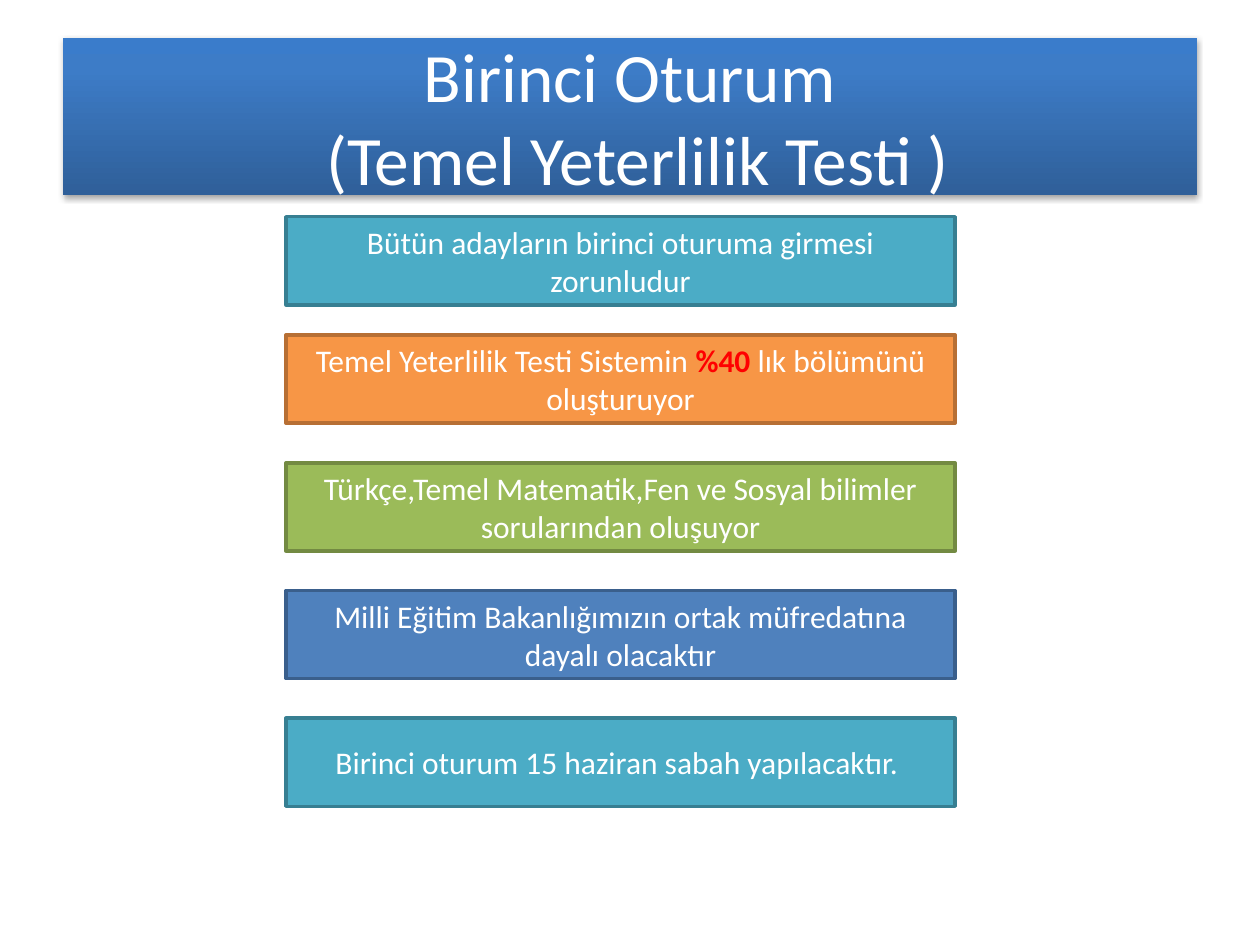
from lxml import etree
from pptx import Presentation
from pptx.dml.color import RGBColor as RGB
from pptx.enum.shapes import MSO_SHAPE as SHAPE
from pptx.enum.text import MSO_ANCHOR as ANCHOR, MSO_AUTO_SIZE as AUTO, PP_ALIGN as ALIGN
from pptx.util import Inches, Pt

NS = "http://schemas.openxmlformats.org/drawingml/2006/main"
FONT = "Calibri"
COLORS = {
    "white": "FFFFFF", "red": "FF0000", "shadow": "000000",
    "title_bottom": "2F5F99", "title_middle": "3D7CC7", "title_top": "3A7CCB",
    "teal": "4BACC6", "teal_edge": "377F92",
    "orange": "F79646", "orange_edge": "B76F34",
    "green": "9BBB59", "green_edge": "738A42",
    "blue": "4F81BD", "blue_edge": "3A5F8C",
}
TITLE = "Birinci Oturum\v (Temel Yeterlilik Testi )"
TITLE_BOX = (0.5, 0.3, 9, 1.25)
# Each fact: fill colour and its runs as (text, highlighted)
INTRO = ("teal", [("Bütün adayların birinci oturuma girmesi zorunludur", False)])
DETAILS = [
    ("orange", [("Temel Yeterlilik Testi Sistemin ", False), ("%40 ", True),
                ("lık bölümünü oluşturuyor", False)]),
    ("green", [("Türkçe,Temel Matematik,Fen ve Sosyal bilimler sorularından oluşuyor", False)]),
    ("blue", [("Milli Eğitim Bakanlığımızın ortak müfredatına dayalı olacaktır", False)]),
    ("teal", [("Birinci oturum 15 haziran sabah yapılacaktır. ", False)]),
]
BAR_LEFT, BAR_WIDTH, BAR_HEIGHT = 2.27, 5.31, 0.7
INTRO_TOP, DETAILS_TOP, LAST_TOP = 1.72, 2.66, 5.7


def rgb(name):
    return RGB.from_string(COLORS[name])


def format_paragraph(p, size):
    p.alignment = ALIGN.CENTER
    p.font.name, p.font.size = FONT, Pt(size)
    p.font.color.rgb = rgb("white")


def add_banner_style(sp):
    """Give the shape a vertical three-stop gradient and a soft shadow below."""
    stops = [(0, "title_bottom"), (80, "title_middle"), (100, "title_top")]
    gs = "".join(f'<a:gs pos="{pos * 1000}"><a:srgbClr val="{COLORS[c]}"/></a:gs>'
                 for pos, c in stops)
    fill = (f'<a:gradFill xmlns:a="{NS}" rotWithShape="1"><a:gsLst>{gs}</a:gsLst>'
            '<a:lin ang="16200000" scaled="0"/></a:gradFill>')
    shadow = (f'<a:effectLst xmlns:a="{NS}"><a:outerShdw blurRad="{Pt(3.1)}" '
              f'dist="{Pt(1.8)}" dir="5400000" rotWithShape="0">'
              f'<a:srgbClr val="{COLORS["shadow"]}"><a:alpha val="35000"/></a:srgbClr>'
              '</a:outerShdw></a:effectLst>')
    for xml in (fill, shadow):
        sp._element.spPr.append(etree.fromstring(xml))


def add_title(s, box):
    sp = s.shapes.title
    sp.left, sp.top, sp.width, sp.height = map(Inches, box)
    add_banner_style(sp)
    tf = sp.text_frame
    tf.text = TITLE
    tf.word_wrap, tf.auto_size = True, AUTO.NONE
    tf.vertical_anchor = ANCHOR.MIDDLE
    format_paragraph(tf.paragraphs[0], 39.6)


def add_bar(s, box, color, runs):
    sp = s.shapes.add_shape(SHAPE.RECTANGLE, *map(Inches, box))
    sp.shadow.inherit = False
    sp.fill.solid()
    sp.fill.fore_color.rgb = rgb(color)
    sp.line.color.rgb = rgb(color + "_edge")
    sp.line.width = Pt(2)
    tf = sp.text_frame
    tf.word_wrap, tf.vertical_anchor = True, ANCHOR.MIDDLE
    p = tf.paragraphs[0]
    format_paragraph(p, 18)
    for text, highlighted in runs:
        r = p.add_run()
        r.text = text
        if highlighted:
            r.font.bold = True
            r.font.color.rgb = rgb("red")


def add_details(s, left, top, last_top):
    pitch = (last_top - top) / (len(DETAILS) - 1)
    for i, (color, runs) in enumerate(DETAILS):
        add_bar(s, (left, top + i * pitch, BAR_WIDTH, BAR_HEIGHT), color, runs)


def main():
    prs = Presentation()
    prs.slide_width, prs.slide_height = Inches(10), Inches(7.5)
    s = prs.slides.add_slide(prs.slide_layouts[5])
    add_title(s, TITLE_BOX)
    add_bar(s, (BAR_LEFT, INTRO_TOP, BAR_WIDTH, BAR_HEIGHT), *INTRO)
    add_details(s, BAR_LEFT, DETAILS_TOP, LAST_TOP)
    prs.save("out.pptx")


if __name__ == "__main__":
    main()
